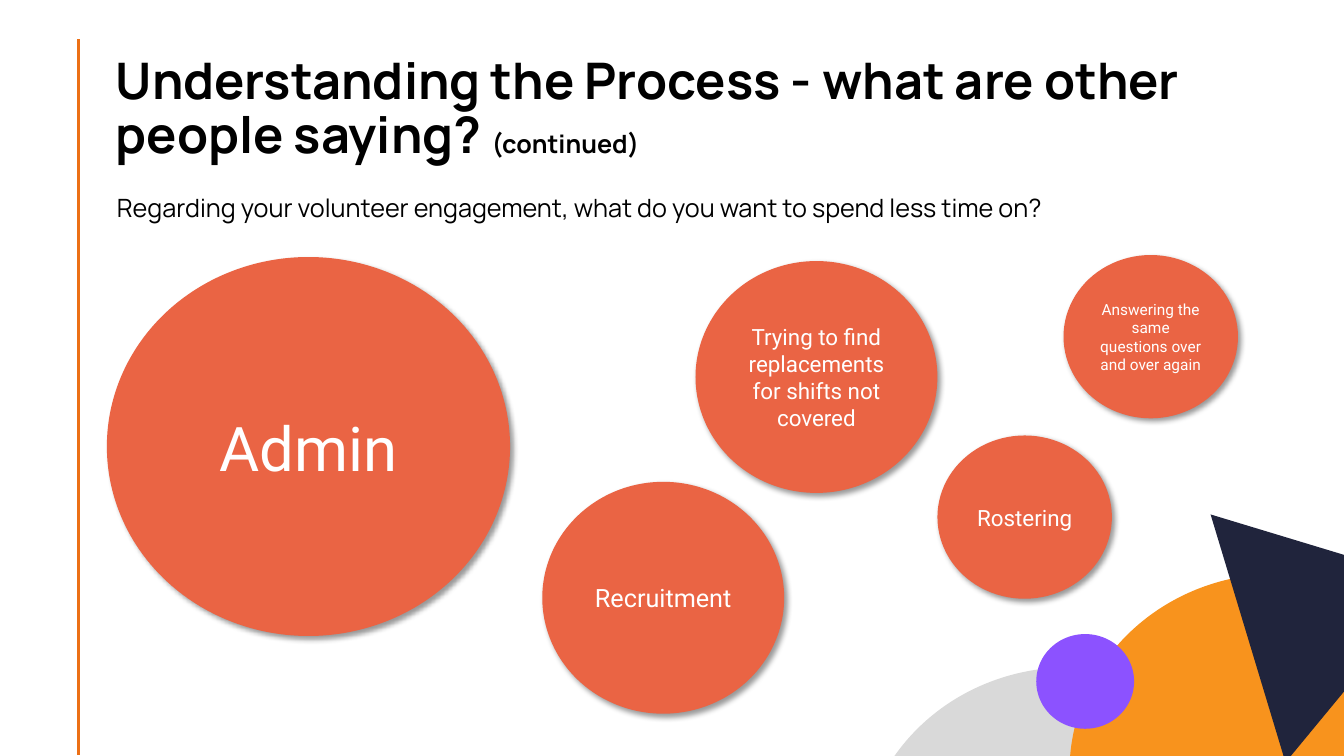
from lxml import etree
from pptx import Presentation
from pptx.dml.color import RGBColor
from pptx.enum.shapes import MSO_CONNECTOR, MSO_SHAPE
from pptx.enum.text import MSO_ANCHOR, PP_ALIGN
from pptx.oxml.ns import qn
from pptx.util import Inches, Pt

ELLIPSE, TRIANGLE = MSO_SHAPE.OVAL, MSO_SHAPE.ISOSCELES_TRIANGLE
STRAIGHT = MSO_CONNECTOR.STRAIGHT
TOP, MIDDLE, BOTTOM = MSO_ANCHOR.TOP, MSO_ANCHOR.MIDDLE, MSO_ANCHOR.BOTTOM
CENTER = PP_ALIGN.CENTER


def rgb(value):
    return RGBColor.from_string(value)


class SlideBuilder:
    """Holds the style and the slide; lengths are percentages of the slide."""

    heading_font, bubble_font = "Manrope", "Roboto"
    ink, bubble_fill, bubble_ink = "000000", "EA6444", "FFFFFF"

    def __init__(self, deck):
        self.deck = deck
        self.slide = deck.slides.add_slide(deck.slide_layouts[6])

    def box(self, left, top, width, height):
        across, down = self.deck.slide_width / 100, self.deck.slide_height / 100
        return (round(left * across), round(top * down),
                round(width * across), round(height * down))

    def rule(self, x, top, bottom, color, weight):
        left, start, _, end = self.box(x, top, 0, bottom)
        line = self.slide.shapes.add_connector(STRAIGHT, left, start, left, end)
        line.line.color.rgb = rgb(color)
        line.line.width = Pt(weight)
        self.effects(line)

    def figure(self, kind, place, color, rotation=0):
        figure = self.slide.shapes.add_shape(kind, *self.box(*place))
        figure.shadow.inherit = False
        figure.fill.solid()
        figure.fill.fore_color.rgb = rgb(color)
        figure.line.fill.background()
        figure.rotation = rotation
        return figure

    def bubble(self, words, corner, extent, size):
        bubble = self.figure(ELLIPSE, corner + extent, self.bubble_fill)
        self.drop_shadow(bubble)
        frame = bubble.text_frame
        frame.word_wrap = True
        frame.vertical_anchor = MIDDLE
        answer = frame.paragraphs[0]
        answer.text = words
        answer.alignment = CENTER
        self.style(answer.font, self.bubble_font, size, self.bubble_ink)

    def text(self, place, pieces, spacing, anchor=TOP, before=0, bold=False):
        frame = self.slide.shapes.add_textbox(*self.box(*place)).text_frame
        frame.word_wrap = True
        frame.vertical_anchor = anchor
        paragraph = frame.paragraphs[0]
        paragraph.line_spacing = spacing
        paragraph.space_before = Pt(before)
        self.style(paragraph.font, self.heading_font, pieces[0][1], self.ink, bold)
        for words, size in pieces:
            run = paragraph.add_run()
            run.text = words
            if size != pieces[0][1]:
                run.font.size = Pt(size)

    def style(self, font, name, size, color, bold=False):
        font.name, font.size, font.bold = name, Pt(size), bold
        font.color.rgb = rgb(color)

    def effects(self, item):
        properties = item._element.spPr
        found = properties.find(qn("a:effectLst"))
        if found is None:
            found = etree.SubElement(properties, qn("a:effectLst"))
        return found

    def drop_shadow(self, item):
        shadow = etree.SubElement(
            self.effects(item), qn("a:outerShdw"), blurRad=str(Pt(4)),
            dist=str(Pt(3)), dir=str(45 * 60000), algn="tl", rotWithShape="0")
        color = etree.SubElement(shadow, qn("a:srgbClr"), val=self.ink)
        etree.SubElement(color, qn("a:alpha"), val="40000")


def main():
    deck = Presentation()
    deck.slide_width, deck.slide_height = Inches(13.33), Inches(7.5)
    page = SlideBuilder(deck)

    # Margin rule and corner decoration
    page.rule(5.85, 5.2, 99.87, "EC7016", 2)
    disc = (31.13, 52.27)
    page.figure(ELLIPSE, (63.98, 88.27) + disc, "D9D9D9")
    page.figure(ELLIPSE, (79.58, 75.87) + disc, "F8931D")
    page.figure(TRIANGLE, (90.15, 67.87, 19.28, 25.73), "20243C", 73.2)
    page.figure(ELLIPSE, (77.1, 83.87, 7.28, 12.53), "8C52FF")

    # Title and question
    page.text((7.88, 10.13, 87.3, 12.27),
              [("Understanding the Process - what are other people saying? ", 36),
               ("(continued)", 18)], 0.9, anchor=BOTTOM, bold=True)
    page.text((7.95, 24, 85.95, 7.47),
              [("Regarding your volunteer engagement, "
                "what do you want to spend less time on?", 18)], 1.18, before=10)

    # Answers, sized by how often they were given
    large, medium, small = (30, 50.13), (18, 30.67), (12.98, 21.6)
    answers = [
        ("Admin", (7.95, 34), large, 44),
        ("Trying to find replacements for shifts not covered",
         (51.75, 34.53), medium, 16),
        ("Rostering", (69.75, 57.6), small, 16),
        ("Recruitment", (40.35, 63.73), medium, 18),
        ("Answering the same questions over and over again",
         (79.13, 33.73), small, 11),
    ]
    for answer in answers:
        page.bubble(*answer)

    deck.save("out.pptx")


if __name__ == "__main__":
    main()
